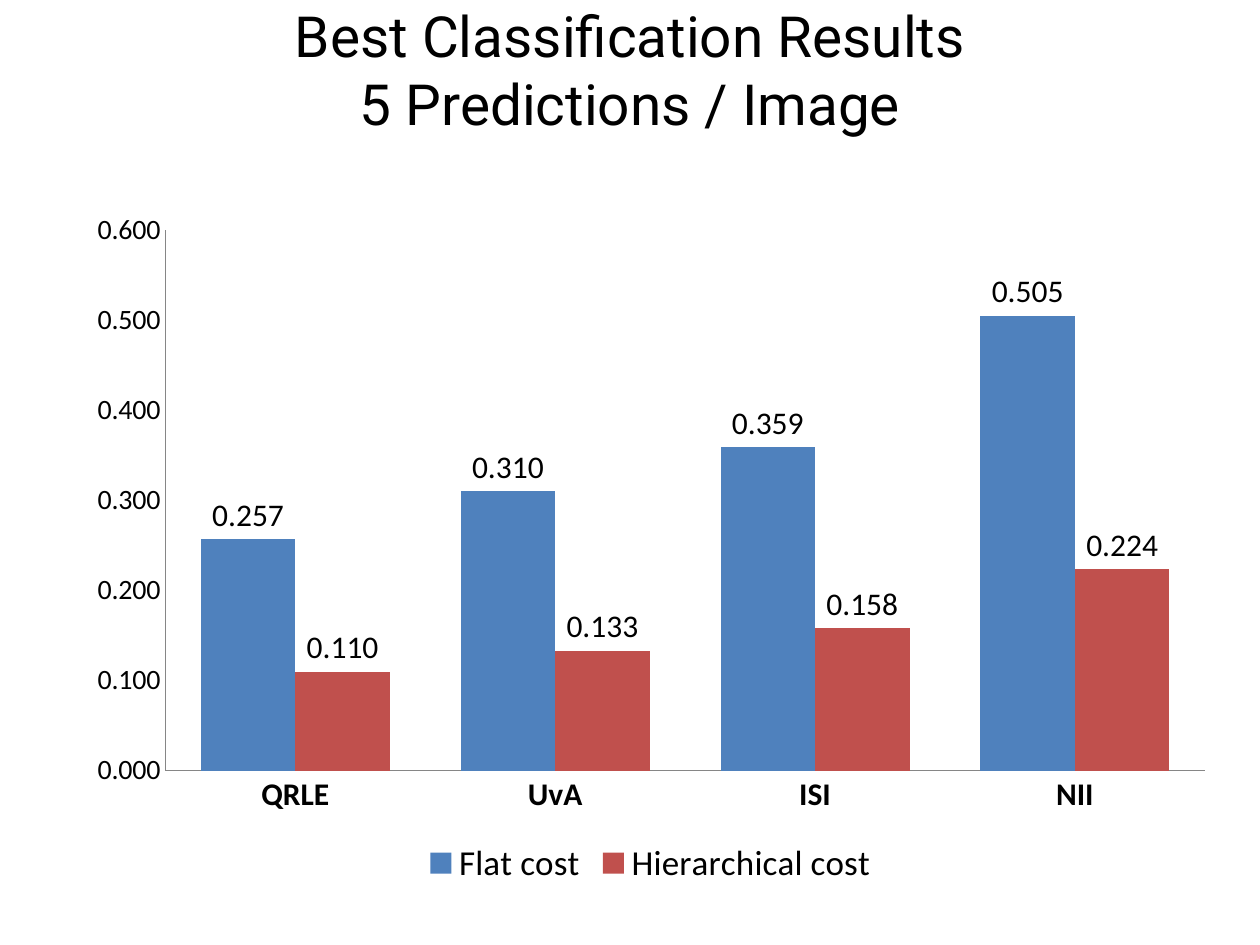
"""Build a slide with a clustered column chart of the best classification results."""
import pptx
import pptx.chart.data
import pptx.dml.color
import pptx.enum.chart
import pptx.enum.text
import pptx.oxml
import pptx.oxml.ns
import pptx.util

PX = 914400 // 126
COLORS = {"text": "000000", "axis": "868686", "flat": "4F81BD", "hierarchical": "C0504D"}
NUMBER_FORMAT = "0.000"


def rgb(name):
    return pptx.dml.color.RGBColor.from_string(COLORS[name])


def style_font(font, size, bold=False):
    font.name = "Calibri"
    font.size = pptx.util.Pt(size)
    font.bold = bold
    font.color.rgb = rgb("text")


presentation = pptx.Presentation()
presentation.slide_width = pptx.util.Inches(10)
presentation.slide_height = pptx.util.Inches(7.5)
slide = presentation.slides.add_slide(presentation.slide_layouts[5])

title = slide.shapes.title
title.left, title.top, title.width, title.height = 0, -10 * PX, 1260 * PX, 158 * PX
title.text_frame.auto_size = pptx.enum.text.MSO_AUTO_SIZE.NONE
title.text_frame.vertical_anchor = pptx.enum.text.MSO_ANCHOR.MIDDLE
paragraph = title.text_frame.paragraphs[0]
paragraph.alignment = pptx.enum.text.PP_ALIGN.CENTER
for index, line in enumerate(["Best Classification Results", "5 Predictions / Image"]):
    if index:
        paragraph.add_line_break()
    run = paragraph.add_run()
    run.text = line
    run.font.name = "Roboto"
    run.font.size = pptx.util.Pt(32.4)
    run.font.color.rgb = rgb("text")

chart_data = pptx.chart.data.CategoryChartData(number_format=NUMBER_FORMAT)
chart_data.categories = ["QRLE", "UvA", "ISI", "NII"]
chart_data.add_series("Flat cost", [0.257, 0.310, 0.359, 0.505])
chart_data.add_series("Hierarchical cost", [0.110, 0.133, 0.158, 0.224])
chart = slide.shapes.add_chart(
    pptx.enum.chart.XL_CHART_TYPE.COLUMN_CLUSTERED,
    73 * PX, 199 * PX, 1155 * PX, 693 * PX, chart_data,
).chart
chart.has_title = False
style_font(chart.font, 10)

chart.has_legend = True
chart.legend.position = pptx.enum.chart.XL_LEGEND_POSITION.BOTTOM
chart.legend.include_in_layout = False
style_font(chart.legend.font, 20)

for axis, size, bold in [(chart.category_axis, 18, True), (chart.value_axis, 16, False)]:
    axis.has_major_gridlines = False
    axis.major_tick_mark = pptx.enum.chart.XL_TICK_MARK.NONE
    axis.minor_tick_mark = pptx.enum.chart.XL_TICK_MARK.NONE
    axis.format.line.color.rgb = rgb("axis")
    axis.format.line.width = pptx.util.Pt(0.75)
    style_font(axis.tick_labels.font, size, bold)
chart.value_axis.minimum_scale = 0
chart.value_axis.maximum_scale = 0.6
chart.value_axis.major_unit = 0.1
chart.value_axis.tick_labels.number_format = NUMBER_FORMAT
chart.value_axis.tick_labels.number_format_is_linked = False

plot = chart.plots[0]
plot.gap_width = 75
plot.overlap = 0
plot.vary_by_categories = False
for series, color in zip(plot.series, ["flat", "hierarchical"]):
    series.format.fill.solid()
    series.format.fill.fore_color.rgb = rgb(color)
    series.invert_if_negative = False
    labels = series.data_labels
    labels.show_value = True
    labels.number_format = NUMBER_FORMAT
    labels.number_format_is_linked = False
    labels.position = pptx.enum.chart.XL_LABEL_POSITION.OUTSIDE_END
    style_font(labels.font, 18)

plot_area = chart.element.find(".//" + pptx.oxml.ns.qn("c:plotArea"))
for layout in plot_area.findall(pptx.oxml.ns.qn("c:layout")):
    plot_area.remove(layout)
plot_area.insert(0, pptx.oxml.parse_xml(
    f'<c:layout {pptx.oxml.ns.nsdecls("c")}><c:manualLayout>'
    '<c:layoutTarget val="inner"/><c:xMode val="edge"/><c:yMode val="edge"/>'
    '<c:x val="0.08"/><c:y val="0.045"/><c:w val="0.9"/><c:h val="0.78"/>'
    '</c:manualLayout></c:layout>'
))

presentation.save("out.pptx")
